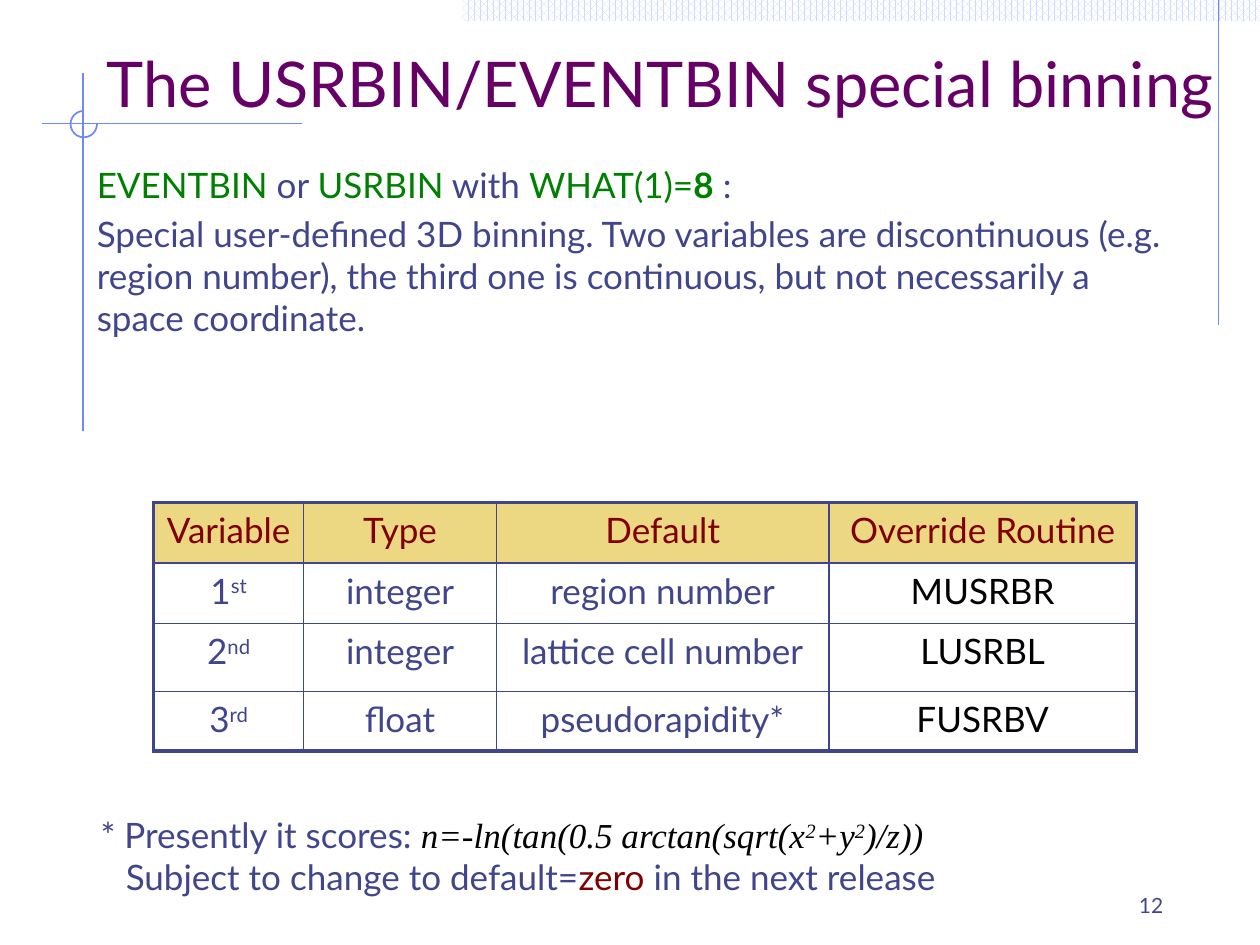
import pptx
import pptx.util
import pptx.dml.color
import pptx.enum.dml
import pptx.enum.shapes
import pptx.enum.text
import pptx.oxml.ns
from lxml import etree

Inches, Pt = pptx.util.Inches, pptx.util.Pt
ALIGN, ANCHOR = pptx.enum.text.PP_ALIGN, pptx.enum.text.MSO_ANCHOR
SHAPE = pptx.enum.shapes.MSO_SHAPE
qn = pptx.oxml.ns.qn

COLORS = {"text": "40458C", "title": "660066", "card": "008000", "accent": "800000",
          "code": "010103", "header": "ECD882", "white": "FFFFFF", "rule": "6F89F7",
          "pattern": "CFDBFD"}

# Content: a paragraph is a list of runs, a run is (text, format)
CARD = {"color": "card"}
FORMULA = {"color": "code", "font": "Times New Roman", "italic": True}
SUPER = {"superscript": True}

TITLE = [[("The USRBIN/EVENTBIN special binning", {})]]
BODY = [
    [("EVENTBIN", CARD), (" or ", {}), ("USRBIN", CARD), (" with ", {}),
     ("WHAT(1)=", CARD), ("8", {**CARD, "bold": True}), (" :", {})],
    [("Special user-defined 3D binning. Two variables are discontinuous (e.g. region number), "
      "the third one is continuous, but not necessarily a space coordinate.", {})],
]
FOOTNOTE_FORMULA = [
    [("* Presently it scores: ", {}), ("n=-ln(tan(0.5 arctan(sqrt(x", FORMULA),
     ("2", {**FORMULA, **SUPER}), ("+y", FORMULA), ("2", {**FORMULA, **SUPER}),
     (")/z))", FORMULA)],
    [("Subject to change to default=", {}), ("zero", {"color": "accent"}),
     (" in the next release", {})],
]
PAGE_NUMBER = [[("12", {})]]

HEADERS = ["Variable", "Type", "Default", "Override Routine"]
VARIABLES = [
    ("1", "st", "integer", "region number", "MUSRBR"),
    ("2", "nd", "integer", "lattice cell number", "LUSRBL"),
    ("3", "rd", "float", "pseudorapidity*", "FUSRBV"),
]
COLUMN_WIDTHS = [1.19, 1.53, 2.64, 2.44]
ROW_HEIGHTS = [0.48, 0.48, 0.54, 0.47]
RULES = [(9.67, 0, 9.67, 2.58), (2.4, 0.98, 0.33, 0.98), (0.66, 0.58, 0.66, 3.42)]


def rgb(name):
    return pptx.dml.color.RGBColor.from_string(COLORS[name])


def write(frame, paragraphs, size=20, color="text", align=ALIGN.LEFT, gap=0, indents=()):
    """Fill a text frame with paragraphs of formatted runs."""
    for index, runs in enumerate(paragraphs):
        paragraph = frame.paragraphs[0] if index == 0 else frame.add_paragraph()
        paragraph.alignment = align
        paragraph.space_before = Pt(gap if index else 0)
        if index < len(indents) and indents[index]:
            properties = paragraph._p.get_or_add_pPr()
            properties.set("marL", str(Inches(indents[index])))
            properties.set("indent", "0")
        for text, style in runs:
            run = paragraph.add_run()
            run.text = text
            run.font.size = Pt(size)
            run.font.name = style.get("font", "Lato")
            run.font.bold = style.get("bold", False)
            run.font.italic = style.get("italic", False)
            run.font.color.rgb = rgb(style.get("color", color))
            if style.get("superscript"):
                run._r.get_or_add_rPr().set("baseline", "30000")


def add_text(slide, box, paragraphs, anchor=ANCHOR.TOP, wrap=True, **style):
    frame = slide.shapes.add_textbox(*map(Inches, box)).text_frame
    frame.word_wrap = wrap
    frame.vertical_anchor = anchor
    write(frame, paragraphs, **style)


def add_shape(slide, kind, box):
    shape = slide.shapes.add_shape(kind, *map(Inches, box))
    shape.shadow.inherit = False
    return shape


def set_border(cell, side, width):
    line = etree.SubElement(cell._tc.get_or_add_tcPr(), qn(f"a:ln{side}"), w=str(Pt(width)))
    fill = etree.SubElement(line, qn("a:solidFill"))
    etree.SubElement(fill, qn("a:srgbClr"), val=COLORS["text"])


def add_background(slide):
    # Translucent panel and patterned strip
    panel = add_shape(slide, SHAPE.RECTANGLE, (0, 0.39, 10, 6.72))
    panel.fill.solid()
    panel.fill.fore_color.rgb = rgb("white")
    panel.line.fill.background()
    color = panel._element.spPr.find(".//" + qn("a:srgbClr"))
    etree.SubElement(color, qn("a:alpha"), val="75000")

    strip = add_shape(slide, SHAPE.RECTANGLE, (3.67, 0, 6.33, 0.17))
    strip.fill.patterned()
    strip.fill.pattern = pptx.enum.dml.MSO_PATTERN.PERCENT_70
    strip.fill.fore_color.rgb = rgb("pattern")
    strip.fill.back_color.rgb = rgb("white")
    strip.line.fill.background()

    # Thin rules and the three-quarter circle where two of them cross
    for ends in RULES:
        rule = slide.shapes.add_connector(
            pptx.enum.shapes.MSO_CONNECTOR.STRAIGHT, *map(Inches, ends))
        rule.line.color.rgb = rgb("rule")
        rule.line.width = Pt(1)
        etree.SubElement(rule._element.spPr, qn("a:effectLst"))
    arc = add_shape(slide, SHAPE.ARC, (0.56, 0.88, 0.21, 0.21))
    arc.adjustments[0], arc.adjustments[1] = 0, 162  # 0 to 270 degrees
    arc.fill.background()
    arc.line.color.rgb = rgb("rule")
    arc.line.width = Pt(1)


def add_variable_table(slide):
    rows = [[[(header, {"color": "accent"})] for header in HEADERS]]
    for number, suffix, kind, default, routine in VARIABLES:
        rows.append([[(number, {}), (suffix, SUPER)], [(kind, {})], [(default, {})],
                     [(routine, {"color": "code"})]])
    last_row, last_column = len(rows) - 1, len(HEADERS) - 1

    table = slide.shapes.add_table(
        len(rows), len(HEADERS), Inches(1.22), Inches(3.99),
        Inches(sum(COLUMN_WIDTHS)), Inches(sum(ROW_HEIGHTS))).table
    table.first_row = table.horz_banding = False
    for column, width in zip(table.columns, COLUMN_WIDTHS):
        column.width = Inches(width)
    for row, height in zip(table.rows, ROW_HEIGHTS):
        row.height = Inches(height)

    for r, row in enumerate(rows):
        for c, runs in enumerate(row):
            cell = table.cell(r, c)
            write(cell.text_frame, [runs], align=ALIGN.CENTER)
            outer = {"L": c == 0, "R": c == last_column, "T": r == 0, "B": r == last_row}
            for side, is_outer in outer.items():
                set_border(cell, side, 2.25 if is_outer else 1)
            cell.fill.solid()
            cell.fill.fore_color.rgb = rgb("white" if r else "header")


def main():
    presentation = pptx.Presentation()
    presentation.slide_width, presentation.slide_height = Inches(10), Inches(7.5)
    slide = presentation.slides.add_slide(presentation.slide_layouts[6])

    add_background(slide)
    add_text(slide, (7.58, 7, 1.75, 0.33), PAGE_NUMBER, anchor=ANCHOR.BOTTOM,
             size=12, align=ALIGN.RIGHT)
    add_text(slide, (0.75, 0.33, 9.25, 0.67), TITLE, anchor=ANCHOR.BOTTOM,
             size=36, color="title")
    add_text(slide, (0.67, 1.25, 8.66, 2.97), BODY, gap=4)
    add_variable_table(slide)
    add_text(slide, (0.7, 6.41, 7.08, 0.77), FOOTNOTE_FORMULA, wrap=False, indents=(0, 0.2))
    presentation.save("out.pptx")


if __name__ == "__main__":
    main()
